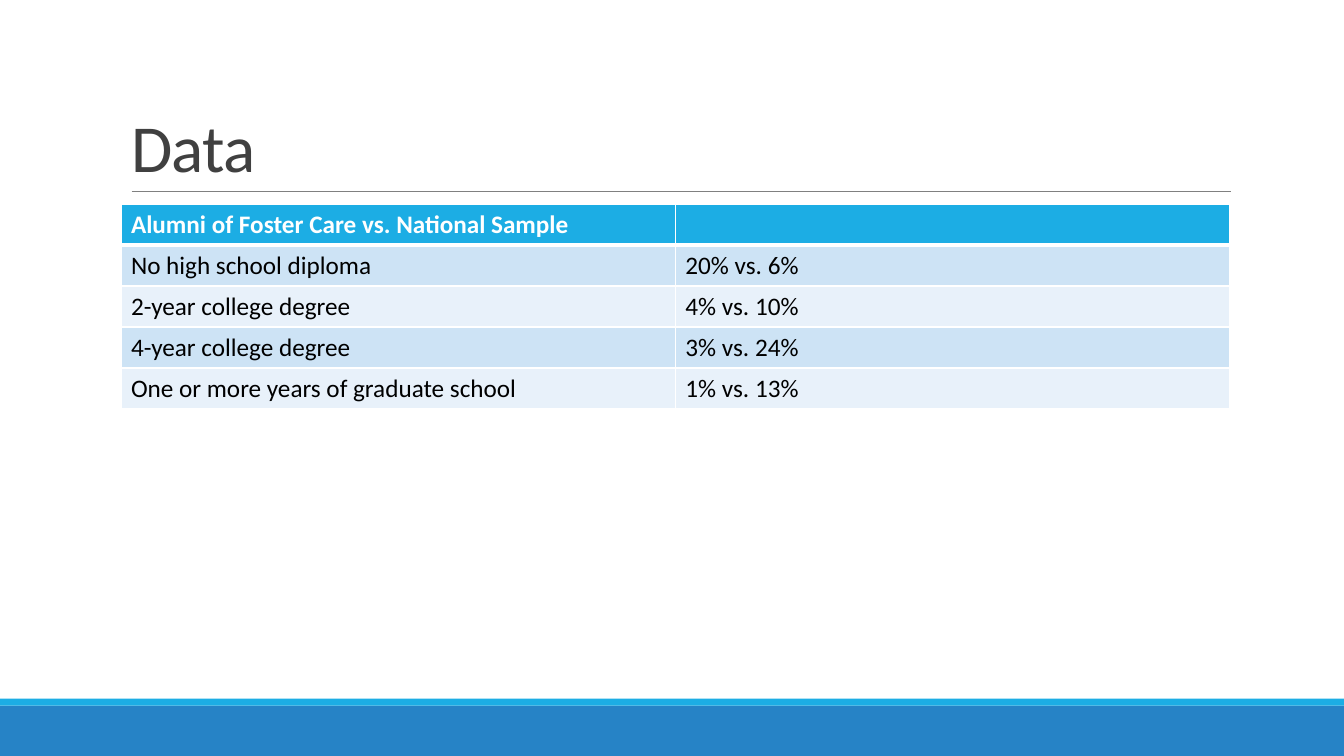
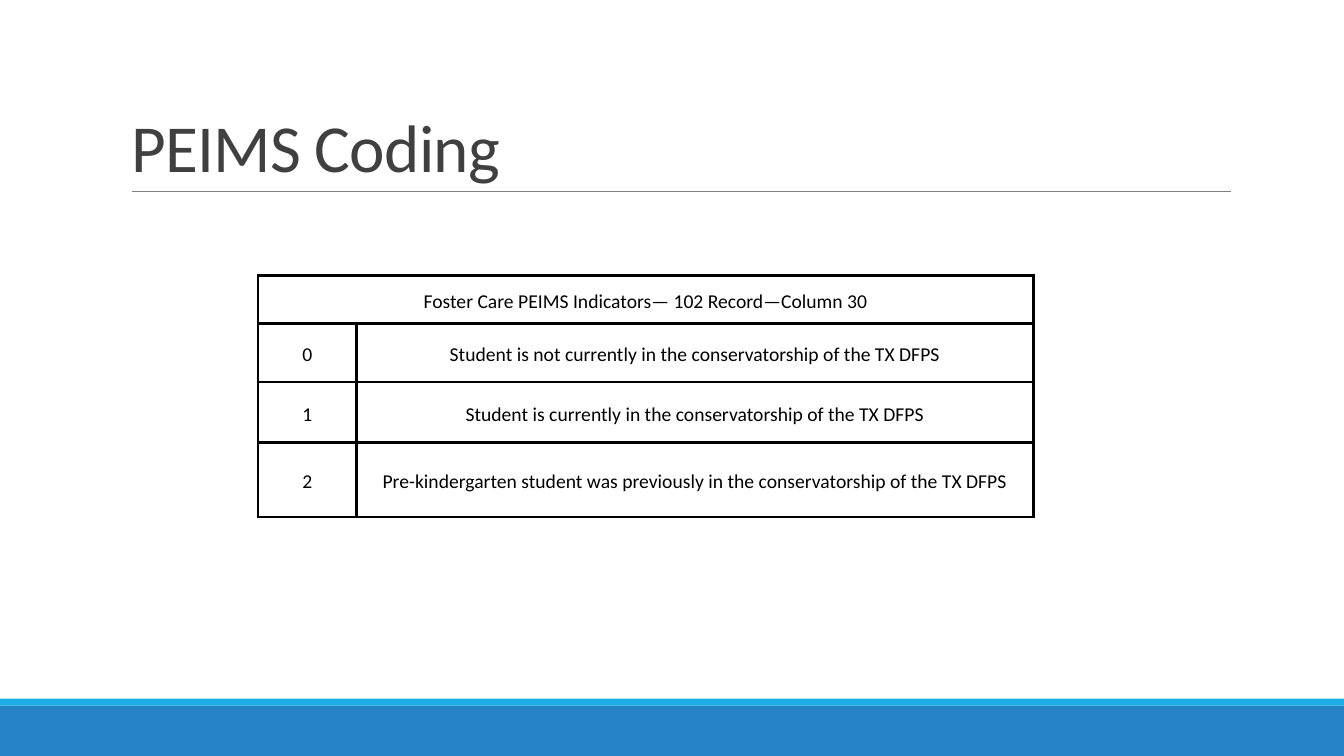
from dataclasses import dataclass

from lxml import etree
from pptx import Presentation
from pptx.dml.color import RGBColor as Color
from pptx.enum.shapes import MSO_CONNECTOR as Connector, MSO_SHAPE as Preset
from pptx.enum.text import MSO_ANCHOR as Anchor, MSO_AUTO_SIZE as AutoSize, PP_ALIGN as Align
from pptx.oxml.ns import qn
from pptx.util import Emu, Inches, Pt


@dataclass(frozen=True)
class Theme:
    font: str = "Calibri"
    title_size: float = 48
    data_size: float = 18
    coding_size: float = 14
    title: str = "404040"
    rule: str = "808080"
    band: str = "2683C6"
    accent: str = "1CADE4"
    dark_row: str = "CDE3F5"
    light_row: str = "E8F1FA"
    white: str = "FFFFFF"
    black: str = "000000"


theme = Theme()
deck = Presentation()
deck.slide_width, deck.slide_height = Emu(12192000), Emu(6858000)

# The grid has 100 columns and 100 rows
COLUMN, ROW = deck.slide_width / 100, deck.slide_height / 100


def area(left, top, width, height):
    """Turn grid columns and rows into slide lengths."""
    return [Emu(round(share * unit)) for share, unit in
            zip((left, top, width, height), (COLUMN, ROW, COLUMN, ROW))]


def write_cell(cell, text, size, color, fill, border, widths, bold=False):
    """Border, fill and write one cell; widths are left, right, top, bottom."""
    properties = cell._tc.get_or_add_tcPr()
    for side, width in zip("LRTB", widths):
        edge = etree.SubElement(properties, qn(f"a:ln{side}"), w=str(Pt(width)))
        solid = etree.SubElement(edge, qn("a:solidFill"))
        etree.SubElement(solid, qn("a:srgbClr"), val=border)
    if fill:
        cell.fill.solid()
        cell.fill.fore_color.rgb = Color.from_string(fill)
    else:
        cell.fill.background()
    if text:
        span = cell.text_frame.paragraphs[0].add_run()
        span.text = text
        span.font.name, span.font.size, span.font.bold = theme.font, Pt(size), bold
        span.font.color.rgb = Color.from_string(color)


# Shared page: title, two footer bands, rule under the title
pages = []
for heading in ("Data", "PEIMS Coding"):
    page = deck.slides.add_slide(deck.slide_layouts[5])
    pages.append(page)

    title = page.shapes.title
    title.left, title.top, title.width, title.height = area(9, 4.1, 82.5, 21.2)
    frame = title.text_frame
    frame.auto_size, frame.vertical_anchor = AutoSize.NONE, Anchor.BOTTOM
    para = frame.paragraphs[0]
    para.alignment, para.line_spacing = Align.LEFT, 0.85
    span = para.add_run()
    span.text = heading
    span.font.name, span.font.size = theme.font, Pt(theme.title_size)
    span.font.color.rgb = Color.from_string(theme.title)
    span._r.get_or_add_rPr().set("spc", "-50")

    for top, height, color in ((93.33, 6.67, theme.band), (92.4, 0.93, theme.accent)):
        band = page.shapes.add_shape(Preset.RECTANGLE, *area(0, top, 100, height))
        band.shadow.inherit = False
        band.fill.solid()
        band.fill.fore_color.rgb = Color.from_string(color)
        band.line.fill.background()

    rule = page.shapes.add_connector(Connector.STRAIGHT, *area(9.8, 25.3, 91.6, 25.3))
    rule.line.width = Pt(0.5)
    rule.line.color.rgb = Color.from_string(theme.rule)
    etree.SubElement(rule._element.spPr, qn("a:effectLst"))

data_page, coding_page = pages

# Data: banded comparison table
data_rows = [
    ("Alumni of Foster Care vs. National Sample", ""),
    ("No high school diploma", "20% vs. 6%"),
    ("2-year college degree", "4% vs. 10%"),
    ("4-year college degree", "3% vs. 24%"),
    ("One or more years of graduate school", "1% vs. 13%"),
]
table = data_page.shapes.add_table(
    len(data_rows), 2, *area(9, 27, 82.5, 5.42 * len(data_rows))).table
for row, texts in enumerate(data_rows):
    header = row == 0
    fill = theme.accent if header else (theme.light_row, theme.dark_row)[row % 2]
    widths = (1, 1, 3 if row == 1 else 1, 3 if header else 1)
    for column, text in enumerate(texts):
        write_cell(table.cell(row, column), text, theme.data_size,
                   theme.white if header else theme.black,
                   fill, theme.white, widths, header)

# PEIMS Coding: outlined table with a merged heading
coding_rows = [
    ("Foster Care PEIMS Indicators— 102 Record—Column 30", ""),
    ("0", "Student is not currently in the conservatorship of the TX DFPS"),
    ("1", "Student is currently in the conservatorship of the TX DFPS"),
    ("2", "Pre-kindergarten student was previously in the conservatorship of the TX DFPS"),
]
column_shares, row_shares = (7.35, 50.33), (6.4, 7.73, 8, 9.87)
table = coding_page.shapes.add_table(
    len(coding_rows), 2, *area(19.2, 36.4, sum(column_shares), sum(row_shares))).table
for column, share in zip(table.columns, column_shares):
    column.width = Emu(round(share * COLUMN))
for row, share in zip(table.rows, row_shares):
    row.height = Emu(round(share * ROW))
table.cell(0, 0).merge(table.cell(0, 1))
for row, texts in enumerate(coding_rows):
    for column, text in enumerate(texts):
        cell = table.cell(row, column)
        cell.vertical_anchor = Anchor.MIDDLE
        cell.margin_left = cell.margin_right = Inches(0.04)
        cell.margin_top = cell.margin_bottom = Inches(0.04)
        para = cell.text_frame.paragraphs[0]
        para.alignment, para.line_spacing, para.space_after = Align.CENTER, 1.19, Pt(6)
        write_cell(cell, text, theme.coding_size, theme.black,
                   None, theme.black, [2.25] * 4)

deck.save("out.pptx")
